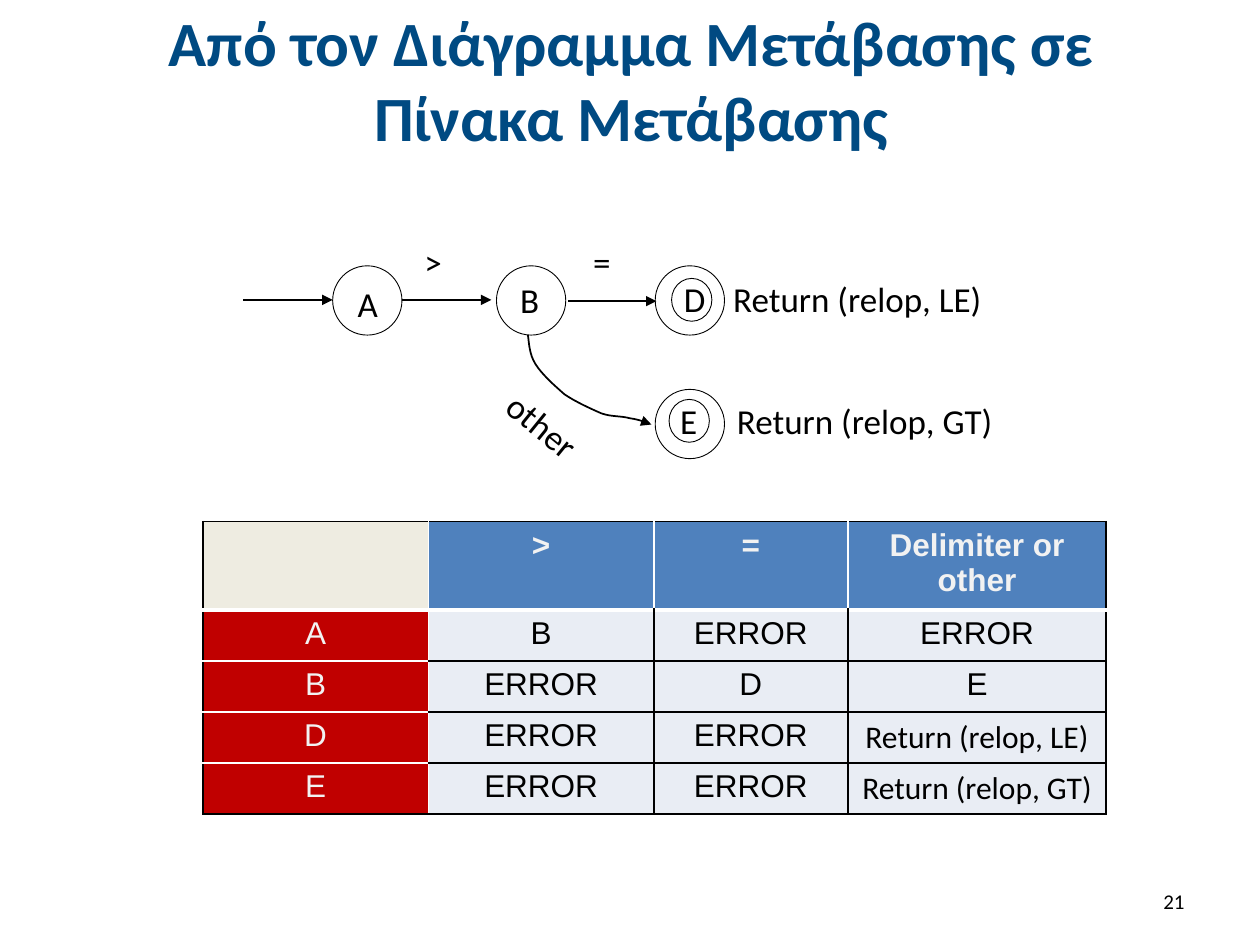
from itertools import product

from lxml.etree import SubElement
from pptx import Presentation
from pptx.dml.color import RGBColor
from pptx.enum.shapes import MSO_CONNECTOR, MSO_SHAPE
from pptx.enum.text import MSO_ANCHOR, MSO_AUTO_SIZE, PP_ALIGN
from pptx.oxml.ns import qn
from pptx.util import Inches, Pt

BLACK = RGBColor(0x00, 0x00, 0x00)
WHITE = RGBColor(0xFF, 0xFF, 0xFF)
NAVY = RGBColor(0x00, 0x4A, 0x82)
CREAM = RGBColor(0xEE, 0xEC, 0xE1)
BLUE = RGBColor(0x4F, 0x81, 0xBD)
RED = RGBColor(0xC0, 0x00, 0x00)
PALE = RGBColor(0xE9, 0xED, 0xF4)
LIGHT = RGBColor(0xF2, 0xF2, 0xF2)

GRID_COLUMNS, GRID_ROWS = 100, 75

STATES = [(26.4, 21.1), (39.4, 21.1), (52, 21.1), (52, 30.9)]
FINAL_RINGS = [(53.3, 22.1), (53.1, 31.7)]
ARROWS = [(19.3, 26.4, 23.8), (31.9, 39, 23.8), (45.1, 52.1, 23.9)]
SYMBOLS = [(">", 32.7), ("=", 46.1)]
STATE_NAMES = [("Α", 27.4, 21.9), ("Β", 40.3, 21.6), ("D", 53.3, 21.5), ("E", 53, 31.2)]
RESULTS = [("Return (relop, LE)", 57.2, 21.5), ("Return (relop, GT)", 57.5, 31.2)]
OTHER_CURVE = [
    (41.9, 26.6),
    (42, 27.3), (42, 28.1), (42.5, 28.9),
    (43, 29.7), (44, 30.6), (44.8, 31.3),
    (45.7, 31.9), (46.8, 32.4), (47.7, 32.8),
    (48.5, 33.1), (49.3, 33), (50, 33.2),
    (50.7, 33.3), (51.2, 33.5), (51.7, 33.7),
]
TRANSITIONS = [
    ["", ">", "=", "Delimiter or other"],
    ["Α", "B", "ERROR", "ERROR"],
    ["Β", "ERROR", "D", "E"],
    ["D", "ERROR", "ERROR", "Return (relop, LE)"],
    ["E", "ERROR", "ERROR", "Return (relop, GT)"],
]


def write_text(frame, text, size=20, font="Calibri", color=BLACK, bold=False, align=PP_ALIGN.LEFT):
    para = frame.paragraphs[0]
    para.alignment = align
    span = para.add_run()
    span.text = text
    span.font.size = Pt(size)
    span.font.name = font
    span.font.bold = bold
    span.font.color.rgb = color


def sample_curve(points, steps=8):
    samples = []
    for first in range(0, len(points) - 1, 3):
        knots = points[first:first + 4]
        for step in range(1, steps + 1):
            t = step / steps
            weights = ((1 - t) ** 3, 3 * t * (1 - t) ** 2, 3 * t ** 2 * (1 - t), t ** 3)
            samples.append(tuple(sum(w * knot[axis] for w, knot in zip(weights, knots)) for axis in (0, 1)))
    return samples


def vertical_edge(row, edge, edges):
    inner = 0 < edge < edges
    return (WHITE if inner and (row == 0 or edge == 1) else BLACK), 1


def horizontal_edge(edge, column, edges):
    if edge == 1:
        return WHITE, 3
    return (WHITE if column == 0 and 0 < edge < edges else BLACK), 1


class SlideBuilder:
    def __init__(self, deck):
        self.width, self.height = deck.slide_width, deck.slide_height
        self.page = deck.slides.add_slide(deck.slide_layouts[5])
        self.diagram = self.page.shapes.add_group_shape().shapes

    def across(self, columns):
        return round(self.width * columns / GRID_COLUMNS)

    def down(self, rows):
        return round(self.height * rows / GRID_ROWS)

    def area(self, left, top, width, height):
        return self.across(left), self.down(top), self.across(width), self.down(height)

    def outline(self, shape, width, arrow=False):
        shape.line.color.rgb = BLACK
        shape.line.width = Pt(width)
        if arrow:
            SubElement(shape.element.spPr.find(qn("a:ln")), qn("a:tailEnd"), type="triangle")

    def title(self, text, *place):
        box = self.page.shapes.title
        box.left, box.top, box.width, box.height = self.area(*place)
        box.text_frame.auto_size = MSO_AUTO_SIZE.NONE
        box.text_frame.vertical_anchor = MSO_ANCHOR.MIDDLE
        write_text(box.text_frame, text, size=36, color=NAVY, bold=True, align=PP_ALIGN.CENTER)

    def page_number(self, text, *place):
        box = self.page.shapes.add_textbox(*self.area(*place))
        box.text_frame.word_wrap = True
        box.text_frame.vertical_anchor = MSO_ANCHOR.MIDDLE
        write_text(box.text_frame, text, size=12, align=PP_ALIGN.RIGHT)

    def circle(self, left, top, width, height):
        ring = self.diagram.add_shape(MSO_SHAPE.OVAL, *self.area(left, top, width, height))
        ring.shadow.inherit = False
        ring.fill.background()
        self.outline(ring, 0.5)

    def arrow(self, start, end, row):
        line = self.diagram.add_connector(
            MSO_CONNECTOR.STRAIGHT, self.across(start), self.down(row), self.across(end), self.down(row))
        self.outline(line, 1.25, arrow=True)
        SubElement(line.element.spPr, qn("a:effectLst"))

    def curved_arrow(self, points):
        start, *rest = [(self.across(x), self.down(y)) for x, y in [points[0]] + sample_curve(points)]
        builder = self.diagram.build_freeform(*start)
        builder.add_line_segments(rest, close=False)
        curve = builder.convert_to_shape()
        curve.shadow.inherit = False
        curve.fill.background()
        self.outline(curve, 1, arrow=True)

    def label(self, text, left, top, width=3.7, fill=None, rotation=0):
        box = self.diagram.add_textbox(*self.area(left, top, width, 4.4))
        box.rotation = rotation
        if fill is not None:
            box.fill.solid()
            box.fill.fore_color.rgb = fill
        box.text_frame.word_wrap = True
        box.text_frame.auto_size = MSO_AUTO_SIZE.SHAPE_TO_FIT_TEXT
        write_text(box.text_frame, text)

    def border(self, cell, side, color, width):
        line = SubElement(cell._tc.get_or_add_tcPr(), qn(f"a:ln{side}"), w=str(Pt(width)))
        SubElement(SubElement(line, qn("a:solidFill")), qn("a:srgbClr"), val=str(color))

    def table(self, rows, left, top, widths, heights):
        count, breadth = len(rows), len(widths)
        place = self.area(left, top, sum(widths), sum(heights))
        table = self.page.shapes.add_table(count, breadth, *place).table
        table.horz_banding = False
        for column, width in zip(table.columns, widths):
            column.width = self.across(width)
        for row, height in zip(table.rows, heights):
            row.height = self.down(height)
        for row, column in product(range(count), range(breadth)):
            cell, text = table.cell(row, column), rows[row][column]
            self.border(cell, "L", *vertical_edge(row, column, breadth))
            self.border(cell, "R", *vertical_edge(row, column + 1, breadth))
            self.border(cell, "T", *horizontal_edge(row, column, count))
            self.border(cell, "B", *horizontal_edge(row + 1, column, count))
            heading = row == 0 or column == 0
            cell.fill.solid()
            if row == 0:
                cell.fill.fore_color.rgb = BLUE if column else CREAM
            else:
                cell.fill.fore_color.rgb = PALE if column else RED
            if text:
                write_text(cell.text_frame, text, size=18, bold=row == 0, align=PP_ALIGN.CENTER,
                           font="Calibri" if text.startswith("Return") else "Arial",
                           color=LIGHT if heading else BLACK)


def main():
    deck = Presentation()
    deck.slide_width, deck.slide_height = Inches(10), Inches(7.5)
    slide = SlideBuilder(deck)
    slide.title("Από τον Διάγραμμα Μετάβασης σε Πίνακα Μετάβασης", 5.1, 1.3, 90, 9.9)
    slide.page_number("21", 71.7, 69.5, 23.3, 4)
    for left, top in STATES:
        slide.circle(left, top, 5.5, 5.5)
    for left, top in FINAL_RINGS:
        slide.circle(left, top, 3.2, 3.4)
    for start, end, row in ARROWS:
        slide.arrow(start, end, row)
    slide.curved_arrow(OTHER_CURVE)
    slide.label("other", 38.8, 32, width=9.5, fill=WHITE, rotation=39.2)
    for symbol, left in SYMBOLS:
        slide.label(symbol, left, 18.6, fill=WHITE)
    for result, left, top in RESULTS:
        slide.label(result, left, top, width=23.9)
    for name, left, top in STATE_NAMES:
        slide.label(name, left, top)
    slide.table(TRANSITIONS, 16.1, 41.4, [17.9, 17.9, 15.4, 20.5], [7] + [4.05] * 4)
    deck.save("out.pptx")


if __name__ == "__main__":
    main()
